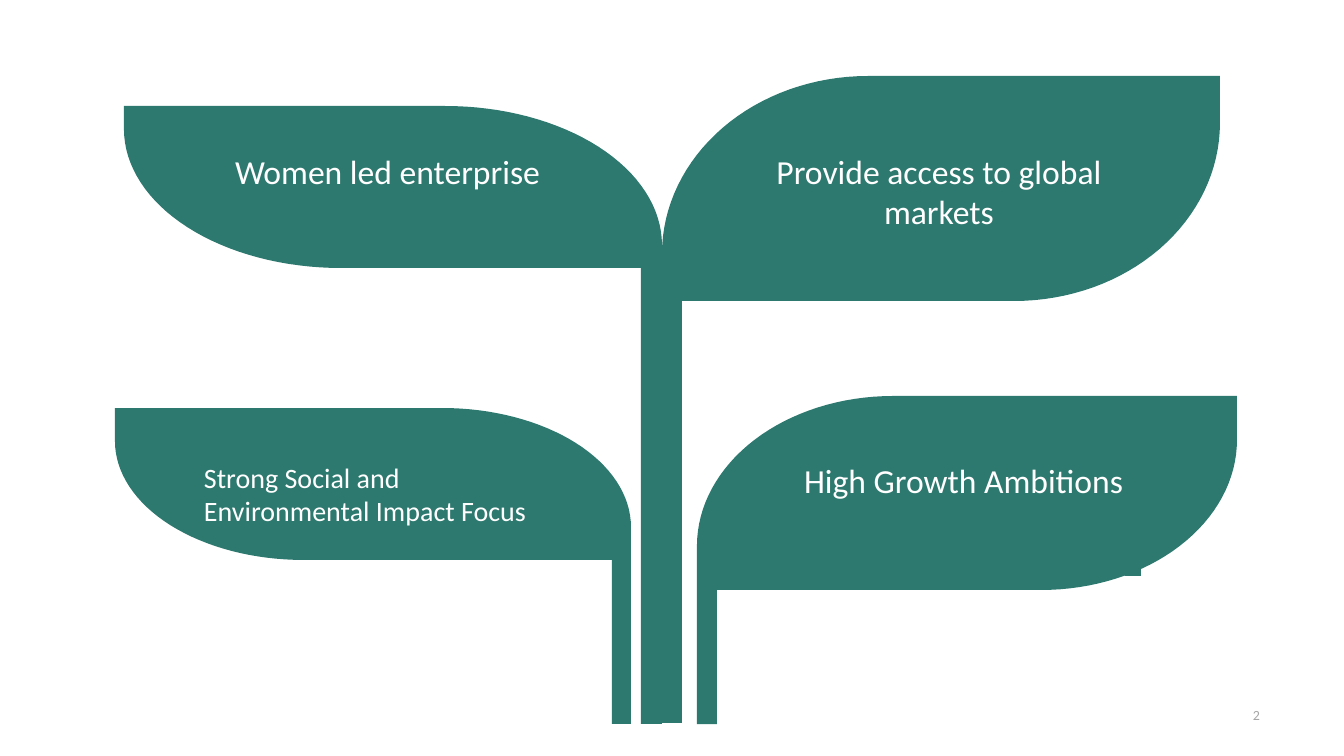
from math import cos, pi, sin
from pptx import Presentation
from pptx.dml.color import RGBColor
from pptx.enum.shapes import MSO_SHAPE
from pptx.enum.text import PP_ALIGN
from pptx.util import Emu, Pt

SCALE = 914400 / 100.8  # EMU in one px
COLORS = {"leaf": "2D796F", "label": "FFFFFF", "number": "A6A6A6"}
ARC_STEPS = 32


def px(length):
    return Emu(round(length * SCALE))


def add_text(text, left, top, width, height, size=24, color="label",
             align=PP_ALIGN.LEFT, insets=(10, 5, 10, 5)):
    box = slide.shapes.add_textbox(px(left), px(top), px(width), px(height))
    frame = box.text_frame
    frame.word_wrap = True
    frame.margin_left, frame.margin_top, frame.margin_right, frame.margin_bottom = map(px, insets)
    paragraph = frame.paragraphs[0]
    paragraph.alignment = align
    run = paragraph.add_run()
    run.text = text
    run.font.name = "Calibri"
    run.font.size = Pt(size)
    run.font.color.rgb = RGBColor.from_string(COLORS[color])


presentation = Presentation()
presentation.slide_width, presentation.slide_height = px(1344), px(756)
slide = presentation.slides.add_slide(presentation.slide_layouts[6])

# Leaves with stems, one freeform per side of the plant
# outer x, inner x, top, bottom, corner radius x, corner radius y, stem edge, stem bottom
left_leaves = [(115, 631, 408, 560, 189, 119, 612, 724),
               (124, 662, 106, 268, 217, 139, 641, 724)]
right_leaves = [(1220, 662, 76, 301, 206, 178, 682, 723),
                (1237, 697, 396, 590, 196, 150, 717, 724)]
plant_parts = []
for leaves, side in ((left_leaves, 1), (right_leaves, -1)):
    builder = None
    for outer, inner, top, bottom, radius_x, radius_y, stem, stem_bottom in leaves:
        arc = [(side * radius_x * (1 - sin(step * pi / 2 / ARC_STEPS)),
                radius_y * (1 - cos(step * pi / 2 / ARC_STEPS)))
               for step in range(ARC_STEPS + 1)]
        points = [(inner - x, top + y) for x, y in arc]
        points += [(inner, stem_bottom), (stem, stem_bottom), (stem, bottom)]
        points += [(outer + x, bottom - y) for x, y in arc]
        if builder is None:
            builder = slide.shapes.build_freeform(px(outer), px(top))
        else:
            builder.move_to(px(outer), px(top))
        builder.add_line_segments([(px(x), px(y)) for x, y in points], close=True)
    plant_parts.append(builder.convert_to_shape())

# Small step on the edge of the lower right leaf
plant_parts.append(slide.shapes.add_shape(
    MSO_SHAPE.RECTANGLE, px(1125), px(566), px(16), px(10)))

for part in plant_parts:
    part.shadow.inherit = False
    part.fill.solid()
    part.fill.fore_color.rgb = RGBColor.from_string(COLORS["leaf"])
    part.line.fill.background()

# Leaf labels
add_text("Women led enterprise", 225, 146, 345, 50)
add_text("Provide access to global markets", 753, 146, 372, 92, align=PP_ALIGN.CENTER)
add_text("Strong Social and Environmental Impact Focus", 194, 455, 375, 78, size=20)
add_text("High Growth Ambitions", 794, 455, 356, 50)

# Slide number
add_text("2", 1252, 705, 10, 19, size=10, color="number", insets=(1, 2, 0, 0))

presentation.save("out.pptx")
